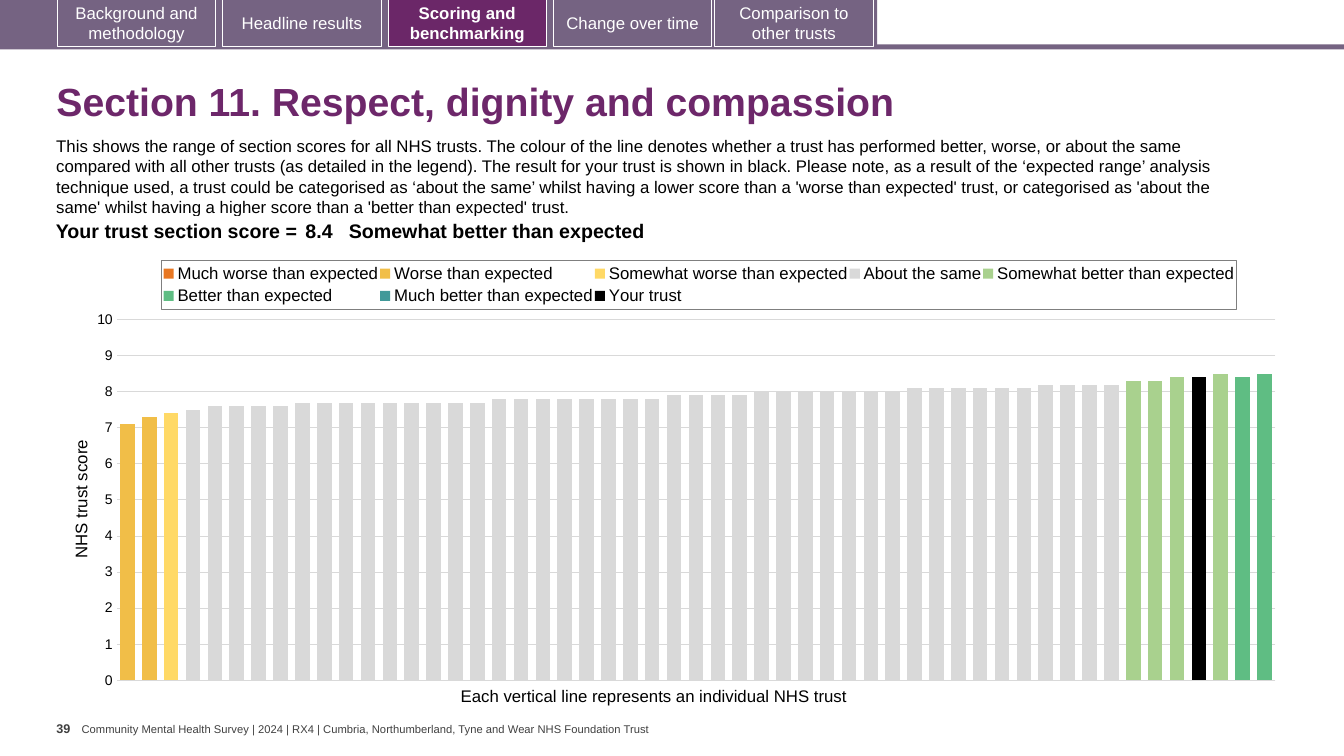
"""Build the section score slide: tab bar, heading, score line and benchmark chart."""
from copy import deepcopy
from dataclasses import dataclass

from lxml import etree
from pptx import Presentation
from pptx.chart.data import CategoryChartData
from pptx.dml.color import RGBColor
from pptx.enum.chart import XL_CHART_TYPE, XL_LEGEND_POSITION, XL_TICK_MARK
from pptx.enum.shapes import MSO_SHAPE
from pptx.enum.text import MSO_ANCHOR, PP_ALIGN
from pptx.oxml.ns import qn
from pptx.util import Inches, Pt

COLUMN = XL_CHART_TYPE.COLUMN_CLUSTERED
TOP = XL_LEGEND_POSITION.TOP
NO_TICK = XL_TICK_MARK.NONE
RECT = MSO_SHAPE.RECTANGLE
MIDDLE = MSO_ANCHOR.MIDDLE
LEFT, CENTER, RIGHT = PP_ALIGN.LEFT, PP_ALIGN.CENTER, PP_ALIGN.RIGHT


@dataclass(frozen=True)
class Theme:
    face: str = "Arial"
    band: RGBColor = RGBColor.from_string("756382")
    active: RGBColor = RGBColor.from_string("6B2768")
    heading: RGBColor = RGBColor.from_string("6D276A")
    white: RGBColor = RGBColor.from_string("FFFFFF")
    black: RGBColor = RGBColor.from_string("000000")
    footer: RGBColor = RGBColor.from_string("404040")
    grid: RGBColor = RGBColor.from_string("D9D9D9")
    frame: RGBColor = RGBColor.from_string("7F7F7F")
    title: int = 28
    score: int = 14
    body: int = 12
    axis: int = 10
    number: int = 9
    small: int = 8


T = Theme()


def style(font, size, color, bold=False):
    font.name, font.size, font.bold = T.face, Pt(size), bold
    font.color.rgb = color


def set_layout(parent, index, **values):
    for old in parent.findall(qn("c:layout")):
        parent.remove(old)
    layout = etree.Element(qn("c:layout"))
    manual = etree.SubElement(layout, qn("c:manualLayout"))
    for tag, value in values.items():
        etree.SubElement(manual, qn(f"c:{tag}"), val=str(value))
    parent.insert(index, layout)


prs = Presentation()
prs.slide_width, prs.slide_height = Inches(13.33), Inches(7.5)
s = prs.slides.add_slide(prs.slide_layouts[5])

for top, width, height in ((0.44, 13.33, 0.05), (0, 8.7, 0.47)):
    band = s.shapes.add_shape(RECT, 0, Inches(top), Inches(width), Inches(height))
    band.shadow.inherit = False
    band.fill.solid()
    band.fill.fore_color.rgb = T.band
    band.line.fill.background()

TABS = (
    (0.57, "Background and methodology"),
    (2.21, "Headline results"),
    (3.85, "Scoring and benchmarking"),
    (5.49, "Change over time"),
    (7.09, "Comparison to other trusts"),
)
ACTIVE_TAB = "Scoring and benchmarking"
for left, label in TABS:
    current = label == ACTIVE_TAB
    tab = s.shapes.add_shape(RECT, Inches(left), Inches(-0.01), Inches(1.57), Inches(0.47))
    tab.shadow.inherit = False
    tab.fill.solid()
    tab.fill.fore_color.rgb = T.active if current else T.band
    tab.line.color.rgb = T.white
    tab.line.width = Pt(0.75)
    tf = tab.text_frame
    tf.word_wrap = True
    tf.vertical_anchor = MIDDLE
    p = tf.paragraphs[0]
    p.text, p.alignment = label, CENTER
    style(p.font, T.body, T.white, current)

title = s.shapes.title
title.left, title.top = Inches(0.46), Inches(0.67)
title.width, title.height = Inches(12.49), Inches(0.72)
title.text_frame.vertical_anchor = MIDDLE
p = title.text_frame.paragraphs[0]
p.text, p.alignment, p.line_spacing = "Section 11. Respect, dignity and compassion", LEFT, 0.9
style(p.font, T.title, T.heading, True)

INTRO = (
    "This shows the range of section scores for all NHS trusts. The colour of the line denotes "
    "whether a trust has performed better, worse, or about the same compared with all other trusts "
    "(as detailed in the legend). The result for your trust is shown in black. Please note, as a "
    "result of the ‘expected range’ analysis technique used, a trust could be categorised as ‘about "
    "the same’ whilst having a lower score than a 'worse than expected' trust, or categorised as "
    "'about the same' whilst having a higher score than a 'better than expected' trust."
)
AXIS_NOTE = "Each vertical line represents an individual NHS trust"
FOOTER = ("Community Mental Health Survey | 2024 | RX4 | "
          "Cumbria, Northumberland, Tyne and Wear NHS Foundation Trust")
TEXTS = (
    (INTRO, (0.46, 1.3, 12.13, 0.91), 0.1, T.body, T.black, False, True),
    (AXIS_NOTE, (4.47, 6.75, 4.11, 0.3), 0.1, T.body, T.black, False, False),
    (FOOTER, (0.81, 7.12, 5.71, 0.23), 0, T.small, T.footer, False, False),
    ("39", (0.56, 7.1, 0.25, 0.25), 0, T.number, T.footer, True, False),
)
for text, box, inset, size, color, bold, wrap in TEXTS:
    tf = s.shapes.add_textbox(*map(Inches, box)).text_frame
    tf.word_wrap = wrap
    tf.margin_left = tf.margin_right = Inches(inset)
    p = tf.paragraphs[0]
    p.text = text
    style(p.font, size, color, bold)

cats = range(1, 54)
same = [value for value, count in ((7.5, 1), (7.6, 4), (7.7, 9), (7.8, 8), (7.9, 4),
                                   (8, 7), (8.1, 6), (8.2, 4)) for _ in range(count)]
SERIES = (
    ("Much worse than expected", "E87722", 1, []),
    ("Worse than expected", "F1BE48", 1, [7.1, 7.3]),
    ("Somewhat worse than expected", "FFD966", 3, [7.4]),
    ("About the same", "D9D9D9", 4, same),
    ("Somewhat better than expected", "A9D18E", 47, [8.3, 8.3, 8.4, 8.4, 8.5]),
    ("Better than expected", "5FBD83", 52, [8.4, 8.5]),
    ("Much better than expected", "419999", 1, []),
    ("Your trust", "000000", 50, [8.4]),
)
data = CategoryChartData()
data.categories = [str(cat) for cat in cats]
for name, _, first, values in SERIES:
    scores = dict(enumerate(values, first))
    data.add_series(name, [scores.get(cat) for cat in cats])

chart = s.shapes.add_chart(COLUMN, Inches(0.67), Inches(2.47), Inches(12.15), Inches(4.44), data).chart
chart.has_title = False
style(chart.font, T.axis, T.black)
plot = chart.plots[0]
plot.gap_width, plot.overlap, plot.vary_by_categories = 50, 100, False
for series, (_, color, _, _) in zip(plot.series, SERIES):
    series.format.fill.solid()
    series.format.fill.fore_color.rgb = RGBColor.from_string(color)
bars = plot._element
area = bars.getparent()
set_layout(area, 0, layoutTarget="inner", xMode="edge", yMode="edge",
           x=0.04, y=0.158, w=0.946, h=0.806)

chart.category_axis.visible = False
axis = chart.value_axis
axis.minimum_scale, axis.maximum_scale, axis.major_unit = 0, 10, 1
axis.major_tick_mark = axis.minor_tick_mark = NO_TICK
axis.format.line.fill.background()
style(axis.tick_labels.font, T.axis, T.black)

own_bars = deepcopy(bars)
own_axes = [deepcopy(chart.category_axis._element), deepcopy(axis._element)]
bars.remove(bars.findall(qn("c:ser"))[-1])
for ser in own_bars.findall(qn("c:ser"))[:-1]:
    own_bars.remove(ser)
bars.addnext(own_bars)
axis._element.addnext(own_axes[0])
own_axes[0].addnext(own_axes[1])
CAT_ID, VAL_ID = "50010", "50020"
for ref, number in zip(own_bars.findall(qn("c:axId")), (CAT_ID, VAL_ID)):
    ref.set("val", number)
for element, number, crossing in zip(own_axes, (CAT_ID, VAL_ID), (VAL_ID, CAT_ID)):
    element.find(qn("c:axId")).set("val", number)
    element.find(qn("c:crossAx")).set("val", crossing)
for old in own_axes[1].findall(qn("c:majorGridlines")):
    own_axes[1].remove(old)
for tag, value in (("axPos", "r"), ("tickLblPos", "none"), ("crosses", "max")):
    own_axes[1].find(qn(f"c:{tag}")).set("val", value)

axis.major_gridlines.format.line.color.rgb = T.grid
axis.major_gridlines.format.line.width = Pt(0.75)
p = axis.axis_title.text_frame.paragraphs[0]
p.text = "NHS trust score"
style(p.font, T.body, T.black)
set_layout(axis.axis_title._element, 1, xMode="edge", yMode="edge", x=0, y=0.42)

chart.has_legend = True
legend = chart.legend
legend.position, legend.include_in_layout = TOP, False
style(legend.font, T.body, T.black)
set_layout(legend._element, 1, xMode="edge", yMode="edge", x=0.077, y=0.025, w=0.877, h=0.11)
frame = etree.Element(qn("c:spPr"))
line = etree.SubElement(frame, qn("a:ln"), w=str(Pt(0.75)))
fill = etree.SubElement(line, qn("a:solidFill"))
etree.SubElement(fill, qn("a:srgbClr"), val=str(T.frame))
legend._element.find(qn("c:txPr")).addprevious(frame)

table = s.shapes.add_table(1, 3, Inches(0.36), Inches(2.15), Inches(11.69), Inches(0.31)).table
table.first_row = table.horz_banding = False
SCORE_CELLS = (
    (2.63, 0.04, RIGHT, "Your trust section score ="),
    (0.47, 0.04, LEFT, "8.4"),
    (8.59, 0, LEFT, "Somewhat better than expected"),
)
for i, (width, inset, align, text) in enumerate(SCORE_CELLS):
    table.columns[i].width = Inches(width)
    cell = table.cell(0, i)
    cell.fill.background()
    cell.margin_left = cell.margin_right = Inches(inset)
    cell.margin_top = cell.margin_bottom = Inches(0.04)
    p = cell.text_frame.paragraphs[0]
    p.text, p.alignment = text, align
    style(p.font, T.score, T.black, True)

prs.save("out.pptx")
